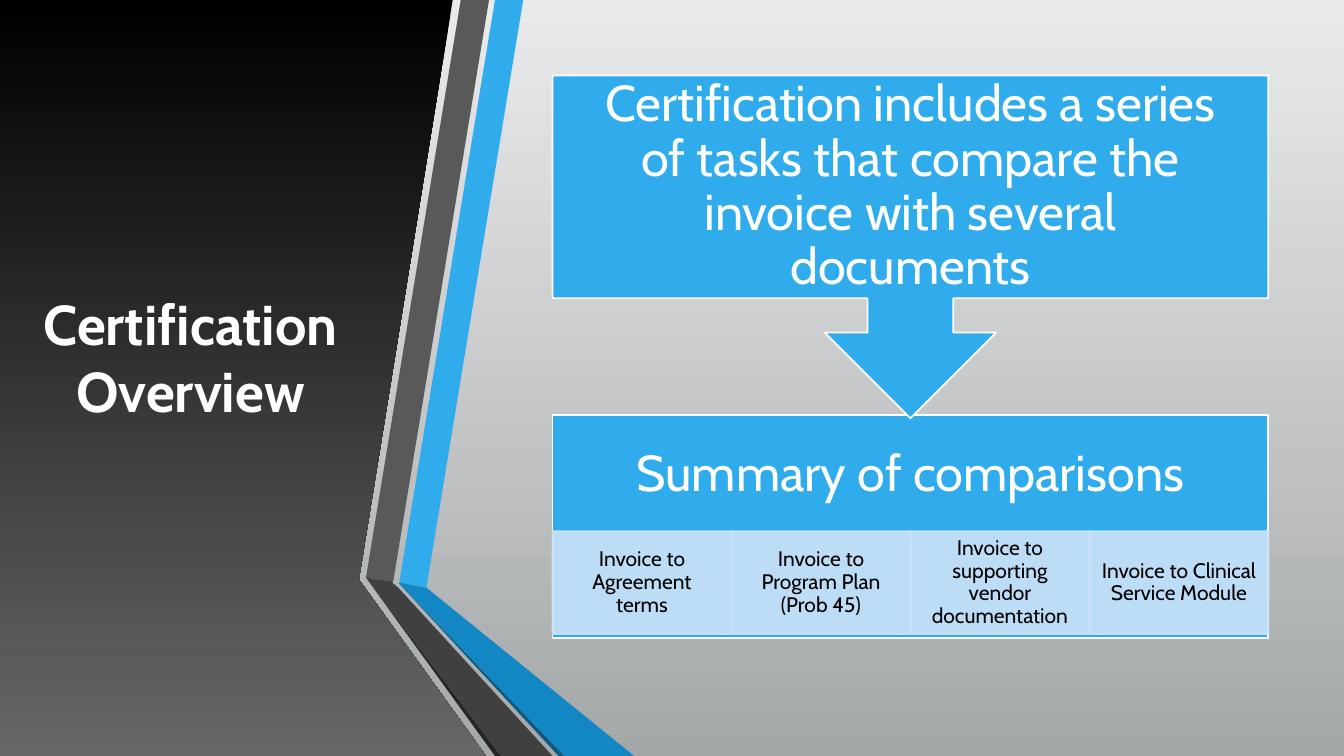
import pptx
import pptx.util
import pptx.dml.color
import pptx.enum.shapes
import pptx.enum.text
import pptx.oxml
import pptx.oxml.ns

Inches = pptx.util.Inches
SHAPE = pptx.enum.shapes.MSO_SHAPE

TITLE = "Certification Overview"
INTRO = ("Certification includes a series of tasks that compare "
         "the invoice with several documents")
SUMMARY = "Summary of comparisons"
COMPARISONS = [
    "Invoice to Agreement terms",
    "Invoice to Program Plan (Prob 45)",
    "Invoice to supporting vendor documentation",
    "Invoice to Clinical Service Module",
]


class Theme:
    font = "Cabin"
    white, black = "FFFFFF", "000000"
    blue, pale_blue = "30ACEC", "CDE3F8"
    background = ("E9EAEB", "A5A8A9")
    panel = ("000000", "676767")
    title_size, heading_size, cell_size = 40, 36, 15
    line_width = 1.25
    cell_opacity = 90


PANEL = [(0, 0), (4.49, 0), (3.56, 5.75), (4.82, 7.5), (0, 7.5)]
RIBBONS = [
    (Theme.blue, [(3.96, 5.78), (4.23, 5.83), (5.19, 0), (4.91, 0)]),
    ("595959", [(4.85, 0), (4.57, 0), (3.63, 5.73), (3.9, 5.77)]),
    ("262626", [(3.63, 5.73), (4.91, 7.5), (4.97, 7.5)]),
    ("0C5A82", [(3.96, 5.79), (5.54, 7.5), (5.6, 7.5)]),
    ("1287C3", [(3.96, 5.79), (5.6, 7.5), (6.29, 7.5), (4.23, 5.83),
                (3.96, 5.78)]),
    ("404040", [(5.48, 7.5), (3.95, 5.83), (3.89, 5.78), (3.9, 5.77),
                (3.63, 5.73), (4.97, 7.5)]),
]

DIAGRAM_LEFT, DIAGRAM_WIDTH = 5.48, 7.1
CALLOUT_TOP, CALLOUT_HEIGHT = 0.75, 3.4
SUMMARY_TOP, SUMMARY_HEIGHT, HEADING_HEIGHT = 4.12, 2.21, 1.19
CELL_TOP, CELL_HEIGHT = 5.27, 1.02
PADDING = 0.28


def rgb(value):
    return pptx.dml.color.RGBColor.from_string(value)


def fill_solid(fill, color):
    fill.solid()
    fill.fore_color.rgb = rgb(color)


def fill_downward(fill, colors):
    """Fill with a gradient from the first color at the top to the second."""
    fill.gradient()
    fill.gradient_angle = 270
    for stop, color in zip(fill.gradient_stops, colors):
        stop.color.rgb = rgb(color)


def add_outline(page, points):
    start, *rest = [(Inches(x), Inches(y)) for x, y in points]
    builder = page.shapes.build_freeform(*start)
    builder.add_line_segments(rest, close=True)
    outline = builder.convert_to_shape()
    outline.shadow.inherit = False
    outline.line.fill.background()
    return outline


def write(shape, text, size, color, insets=None, bold=False, spacing=None):
    """Centre text in a shape; insets run left, top, right, bottom."""
    frame = shape.text_frame
    frame.text = text
    frame.word_wrap = True
    frame.auto_size = pptx.enum.text.MSO_AUTO_SIZE.NONE
    frame.vertical_anchor = pptx.enum.text.MSO_ANCHOR.MIDDLE
    if insets:
        (frame.margin_left, frame.margin_top,
         frame.margin_right, frame.margin_bottom) = map(Inches, insets)
    para = frame.paragraphs[0]
    para.alignment = pptx.enum.text.PP_ALIGN.CENTER
    para.line_spacing = spacing
    font = para.runs[0].font
    font.name, font.size, font.bold = Theme.font, pptx.util.Pt(size), bold
    font.color.rgb = rgb(color)


def add_box(page, kind, place, fill, line):
    box = page.shapes.add_shape(kind, *map(Inches, place))
    box.shadow.inherit = False
    fill_solid(box.fill, fill)
    box.line.color.rgb = rgb(line)
    box.line.width = pptx.util.Pt(Theme.line_width)
    return box


def set_opacity(box, percent):
    for color in box.element.spPr.iter(pptx.oxml.ns.qn("a:srgbClr")):
        color.append(pptx.oxml.parse_xml(
            f'<a:alpha {pptx.oxml.ns.nsdecls("a")} val="{percent * 1000}"/>'))


def add_title(page):
    title = page.shapes.title
    title.left, title.top = Inches(-0.03), Inches(0.75)
    title.width, title.height = Inches(3.84), Inches(5.58)
    write(title, TITLE, Theme.title_size, Theme.white, bold=True)
    page.shapes.element.append(title.element)  # bring in front of the panel


def add_diagram(page):
    summary = add_box(
        page, SHAPE.RECTANGLE,
        (DIAGRAM_LEFT, SUMMARY_TOP, DIAGRAM_WIDTH, SUMMARY_HEIGHT),
        Theme.blue, Theme.white)
    below_heading = SUMMARY_HEIGHT - HEADING_HEIGHT
    write(summary, SUMMARY, Theme.heading_size, Theme.white,
          (PADDING, PADDING, PADDING, PADDING + below_heading), spacing=0.9)

    cell_width = DIAGRAM_WIDTH / len(COMPARISONS)
    for index, text in enumerate(COMPARISONS):
        left = DIAGRAM_LEFT + index * cell_width
        cell = add_box(page, SHAPE.RECTANGLE,
                       (left, CELL_TOP, cell_width, CELL_HEIGHT),
                       Theme.pale_blue, Theme.pale_blue)
        set_opacity(cell, Theme.cell_opacity)
        write(cell, text, Theme.cell_size, Theme.black,
              (0.12, 0.02, 0.12, 0.02), spacing=0.9)

    callout = add_box(
        page, SHAPE.DOWN_ARROW_CALLOUT,
        (DIAGRAM_LEFT, CALLOUT_TOP, DIAGRAM_WIDTH, CALLOUT_HEIGHT),
        Theme.blue, Theme.white)
    write(callout, INTRO, Theme.heading_size, Theme.white,
          (PADDING,) * 4, spacing=0.9)


def main():
    deck = pptx.Presentation()
    deck.slide_width, deck.slide_height = Inches(13.33), Inches(7.5)
    page = deck.slides.add_slide(deck.slide_layouts.get_by_name("Title Only"))
    fill_downward(page.background.fill, Theme.background)
    fill_downward(add_outline(page, PANEL).fill, Theme.panel)
    add_title(page)
    for color, points in RIBBONS:
        fill_solid(add_outline(page, points).fill, color)
    add_diagram(page)
    deck.save("out.pptx")


if __name__ == "__main__":
    main()
